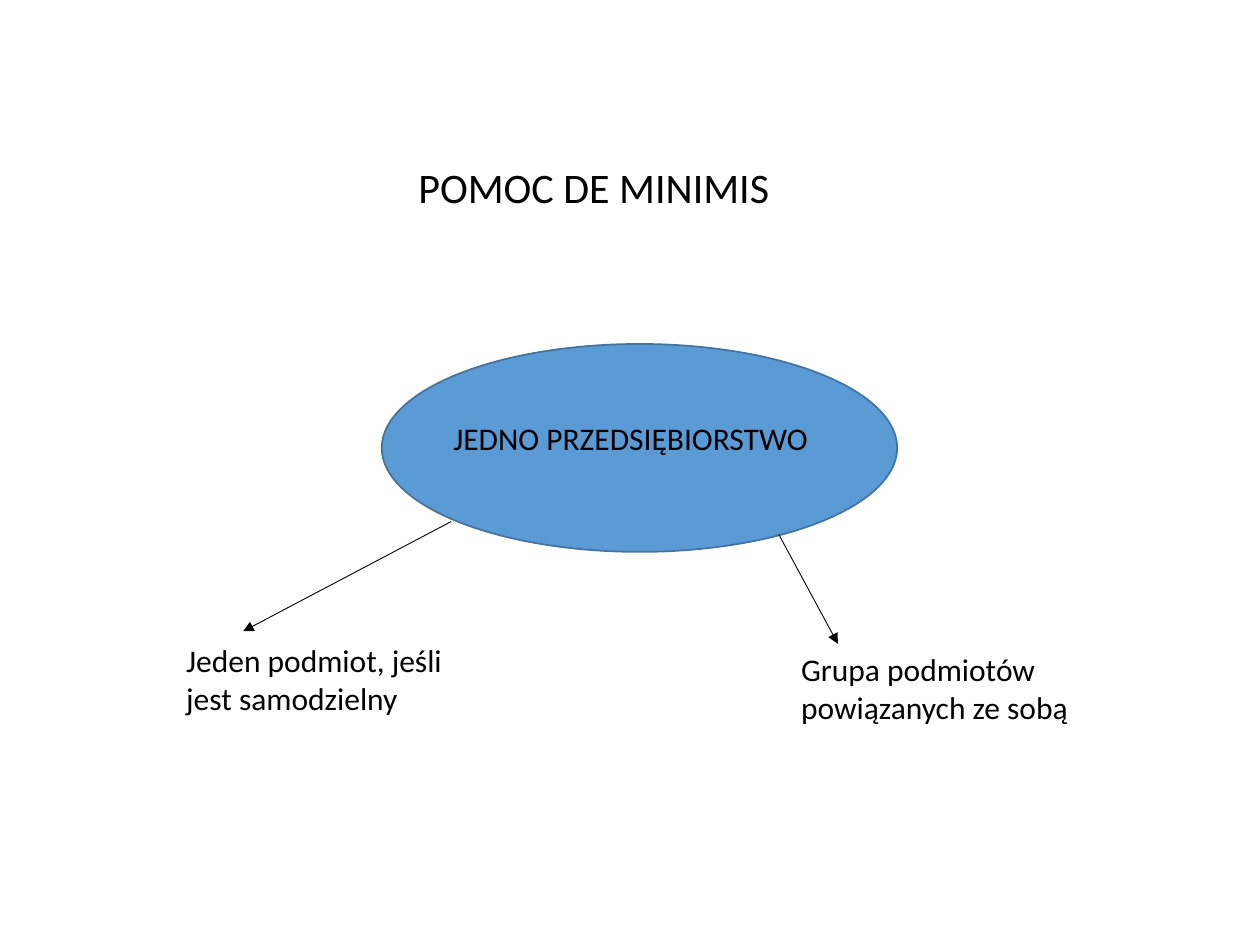
from lxml import etree
from pptx import Presentation
from pptx import util as u
from pptx.dml.color import RGBColor
from pptx.enum import shapes, text
from pptx.oxml.ns import qn

prs = Presentation()
prs.slide_width, prs.slide_height = u.Inches(10), u.Inches(7.5)
CELL = u.Inches(0.1)
rgb = RGBColor.from_string


def grid(*cells):
    return [round(c * CELL) for c in cells]


def write(sp, words, size):
    tf = sp.text_frame
    tf.word_wrap = True
    tf.auto_size = text.MSO_AUTO_SIZE.NONE
    tf.text = words
    p = tf.paragraphs[0]
    p.alignment = text.PP_ALIGN.LEFT
    p.font.name = "Calibri"
    p.font.size = u.Pt(size)
    p.font.color.rgb = rgb("000000")


s = prs.slides.add_slide(prs.slide_layouts[5])
title = s.shapes.title
title.left, title.top, title.width, title.height = grid(32.2, 12.3, 35, 5)
title.text_frame.vertical_anchor = text.MSO_ANCHOR.MIDDLE
write(title, "POMOC DE MINIMIS", 24)

ellipse = s.shapes.add_shape(shapes.MSO_SHAPE.OVAL, *grid(30.3, 27.3, 40.9, 16.5))
ellipse.shadow.inherit = False
ellipse.fill.solid()
ellipse.fill.fore_color.rgb = rgb("5B9BD5")
ellipse.line.color.rgb = rgb("43739E")
ellipse.line.width = u.Pt(1)

labels = [
    ("JEDNO PRZEDSIĘBIORSTWO", (35, 32.8, 34.6, 4)),
    ("Jeden podmiot, jeśli jest samodzielny", (13.8, 50.4, 26, 7.1)),
    ("Grupa podmiotów powiązanych ze sobą", (62.6, 51.1, 26, 7.1)),
]
for words, cells in labels:
    write(s.shapes.add_textbox(*grid(*cells)), words, 18)

for ends in [(35.8, 41.4, 19.3, 50.1), (61.8, 42.4, 66.5, 51.1)]:
    arrow = s.shapes.add_connector(shapes.MSO_CONNECTOR.STRAIGHT, *grid(*ends))
    arrow.line.color.rgb = rgb("000000")
    arrow.line.width = u.Pt(0.5)
    etree.SubElement(arrow.line._get_or_add_ln(), qn("a:tailEnd"), type="triangle")
    etree.SubElement(arrow._element.spPr, qn("a:effectLst"))

prs.save("out.pptx")
